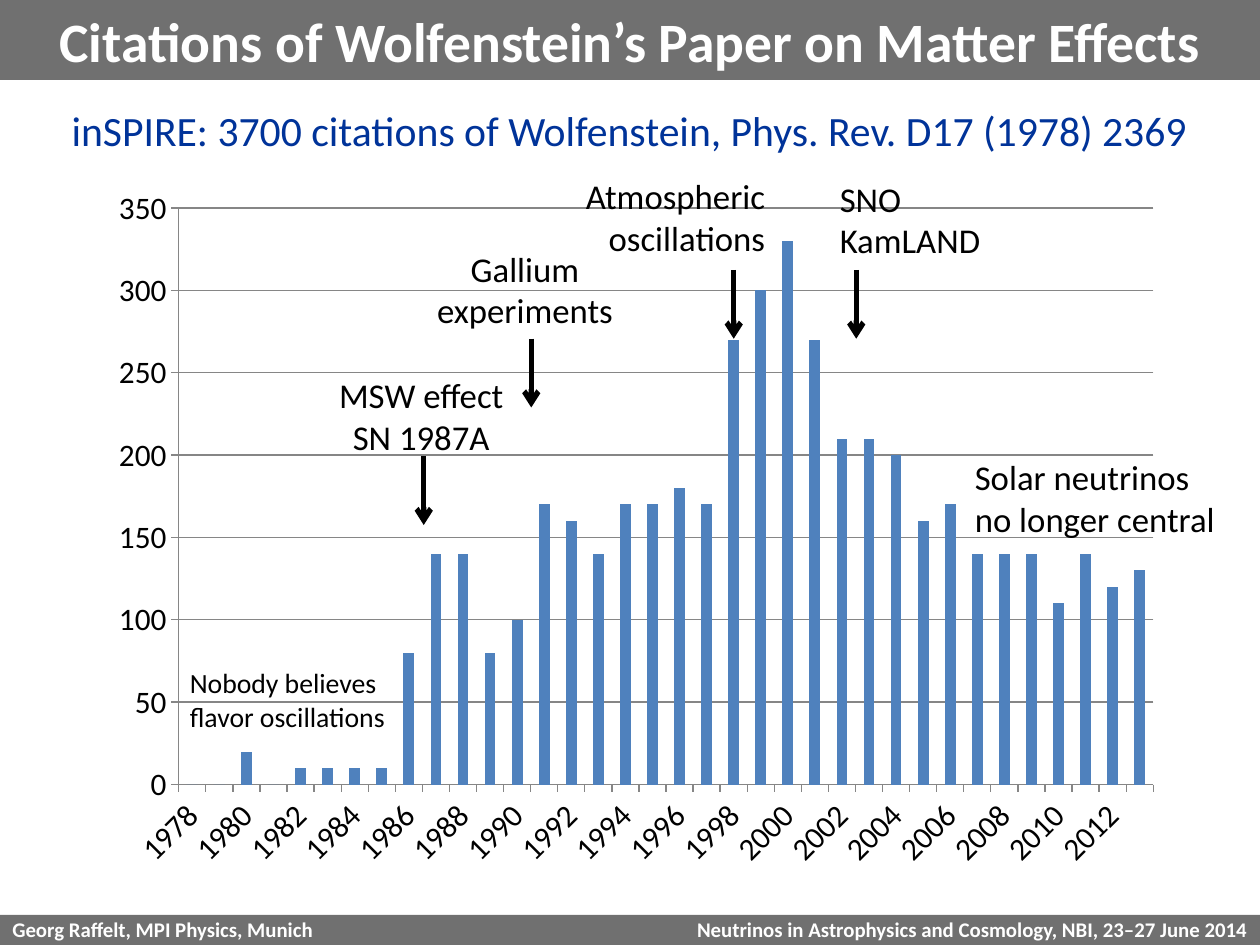
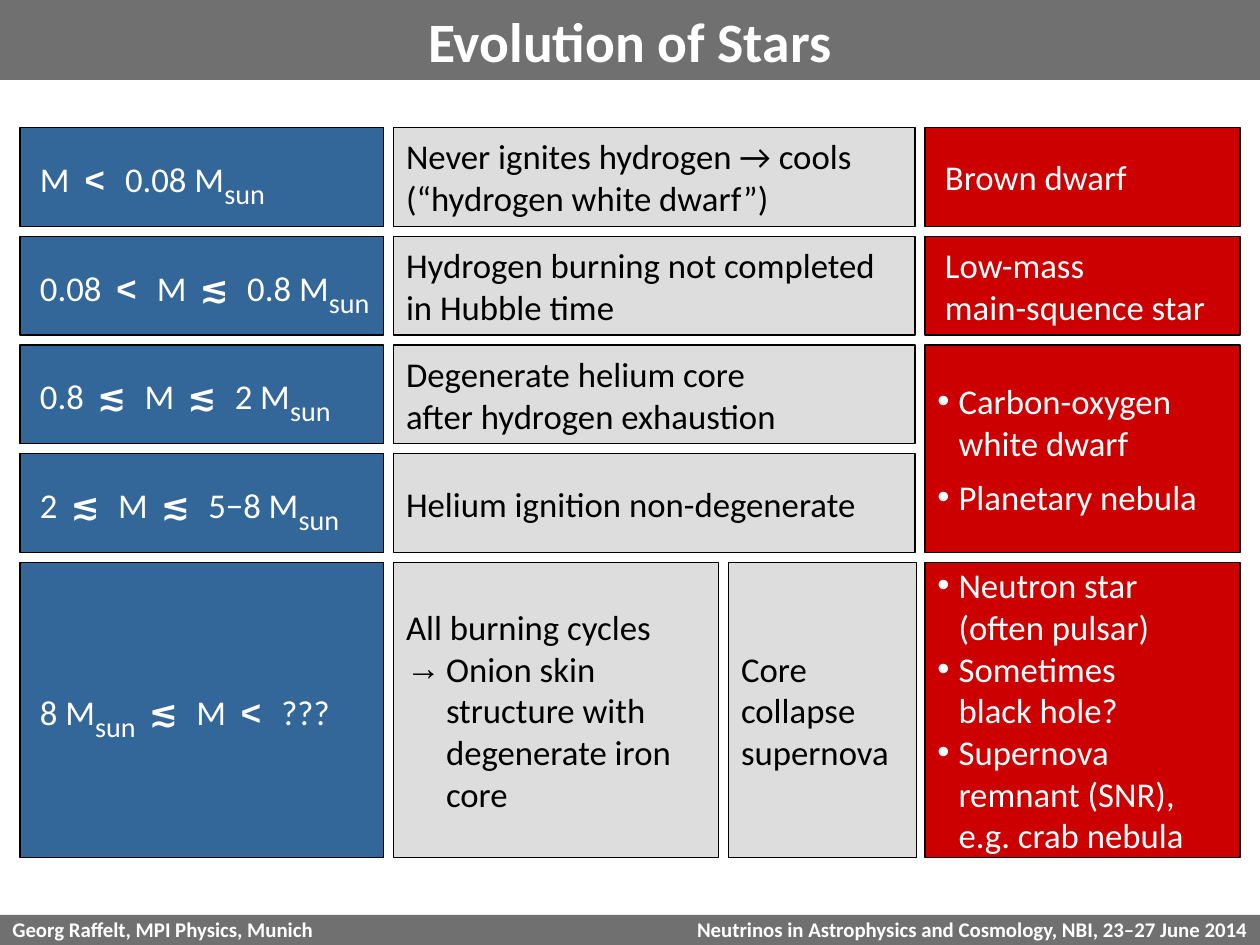
from pptx import Presentation
from pptx.chart.data import CategoryChartData
from pptx.dml.color import RGBColor
from pptx.enum.chart import XL_CHART_TYPE, XL_TICK_MARK
from pptx.enum.shapes import MSO_CONNECTOR, MSO_SHAPE
from pptx.enum.text import MSO_ANCHOR, MSO_AUTO_SIZE, PP_ALIGN
from pptx.oxml import parse_xml
from pptx.oxml.ns import nsdecls, qn
from pptx.util import Inches, Pt

LEFT, CENTER, RIGHT = PP_ALIGN.LEFT, PP_ALIGN.CENTER, PP_ALIGN.RIGHT
MIDDLE = MSO_ANCHOR.MIDDLE
RECTANGLE = MSO_SHAPE.RECTANGLE
STRAIGHT = MSO_CONNECTOR.STRAIGHT
STACKED = XL_CHART_TYPE.COLUMN_STACKED
OUTSIDE = XL_TICK_MARK.OUTSIDE

BLACK = RGBColor(0x00, 0x00, 0x00)
WHITE = RGBColor(0xFF, 0xFF, 0xFF)
BAND_GRAY = RGBColor(0x70, 0x70, 0x70)
AXIS_GRAY = RGBColor(0x86, 0x86, 0x86)
CELL_GRAY = RGBColor(0xDD, 0xDD, 0xDD)
NAVY = RGBColor(0x00, 0x33, 0x99)
BAR_BLUE = RGBColor(0x4F, 0x81, 0xBD)
MASS_BLUE = RGBColor(0x33, 0x66, 0x99)
RED = RGBColor(0xCC, 0x00, 0x00)

FONT = "Calibri"
WIDTH, HEIGHT = 10.08, 7.56
TITLE_HEIGHT, FOOTER_HEIGHT = 0.64, 0.24
BULLET_INDENTS = {"•": 0.17, "→": 0.32}
OPERATORS = (" < ", " ≲ ")


def write_lines(frame, lines, size, color, align=LEFT, bold=False, gap=0):
    """Fill a frame; a line is a string or a tuple of spans, and may open with a bullet."""
    for index, line in enumerate(lines):
        spans = [line] if isinstance(line, str) else list(line)
        para = frame.paragraphs[0] if index == 0 else frame.add_paragraph()
        para.alignment = align
        if index and gap:
            para.space_before = Pt(gap)
        bullet = spans[0][0]
        if bullet in BULLET_INDENTS:
            spans[0] = spans[0][2:]
            indent = Inches(BULLET_INDENTS[bullet])
            properties = para._p.get_or_add_pPr()
            properties.set("marL", str(indent))
            properties.set("indent", str(-indent))
            properties.append(parse_xml(f'<a:buFont {nsdecls("a")} typeface="Arial"/>'))
            properties.append(parse_xml(f'<a:buChar {nsdecls("a")} char="{bullet}"/>'))
        for text in spans:
            if text == "\v":
                para.add_line_break()
                continue
            span = para.add_run()
            span.text = text
            formats = {"name": FONT, "size": Pt(size), "bold": bold}
            if text in OPERATORS:
                formats["bold"] = True
                span._r.get_or_add_rPr().set("spc", "300")
            elif text == "sun":
                formats["size"] = Pt(28)
                span._r.get_or_add_rPr().set("baseline", "-25000")
            if text == " < ":
                formats["name"] = "Arial"
            for name, value in formats.items():
                setattr(span.font, name, value)
            span.font.color.rgb = color


def add_label(page, lines, at, size, color, align=LEFT, wrap=False):
    box = page.shapes.add_textbox(*map(Inches, at))
    box.text_frame.word_wrap = wrap
    write_lines(box.text_frame, lines, size, color, align)


deck = Presentation()
deck.slide_width, deck.slide_height = Inches(WIDTH), Inches(HEIGHT)

# Title bands
pages = []
for title_text in ("Citations of Wolfenstein’s Paper on Matter Effects", "Evolution of Stars"):
    page = deck.slides.add_slide(deck.slide_layouts[5])
    title = page.shapes.title
    title.left, title.top = Inches(0), Inches(0)
    title.width, title.height = Inches(WIDTH), Inches(TITLE_HEIGHT)
    title.fill.solid()
    title.fill.fore_color.rgb = BAND_GRAY
    title.text_frame.auto_size = MSO_AUTO_SIZE.NONE
    title.text_frame.vertical_anchor = MIDDLE
    write_lines(title.text_frame, [title_text], 32, WHITE, CENTER, bold=True)
    pages.append(page)
citations, stars = pages

# Footer band, moved to the master so that every slide shows it
footer_top = HEIGHT - FOOTER_HEIGHT
footer_parts = [
    (0, WIDTH, LEFT, BAND_GRAY, "Georg Raffelt, MPI Physics, Munich"),
    (WIDTH / 2, WIDTH / 2, RIGHT, None,
     "Neutrinos in Astrophysics and Cosmology, NBI, 23–27 June 2014"),
]
for left, width, align, fill, text in footer_parts:
    footer = citations.shapes.add_shape(
        RECTANGLE, Inches(left), Inches(footer_top), Inches(width), Inches(FOOTER_HEIGHT))
    footer.shadow.inherit = False
    footer.line.fill.background()
    if fill is None:
        footer.fill.background()
    else:
        footer.fill.solid()
        footer.fill.fore_color.rgb = fill
    frame = footer.text_frame
    frame.word_wrap = False
    frame.vertical_anchor = MIDDLE
    frame.margin_top, frame.margin_bottom = Inches(0.05), Inches(0.07)
    write_lines(frame, [text], 12, WHITE, align, bold=True)
    deck.slide_master.shapes.element.append(footer.element)

# Slide 1: citations per year
chart_data = CategoryChartData()
chart_data.categories = [str(year) for year in range(1978, 2014)]
chart_data.add_series("Series 1", [
    0, 0, 20, 0, 10, 10, 10, 10, 80, 140, 140, 80, 100, 170, 160, 140, 170, 170,
    180, 170, 270, 300, 330, 270, 210, 210, 200, 160, 170, 140, 140, 140, 110, 140, 120, 130])
chart = citations.shapes.add_chart(
    STACKED, Inches(0.67), Inches(1.5), Inches(8.74), Inches(5.66), chart_data).chart
chart.has_legend = False
chart.has_title = False
chart.font.name, chart.font.size = FONT, Pt(18)
chart.font.color.rgb = BLACK

bars = chart.plots[0]
bars.gap_width, bars.overlap = 150, 100
bars.vary_by_categories = False
bars.series[0].format.fill.solid()
bars.series[0].format.fill.fore_color.rgb = BAR_BLUE

value_axis = chart.value_axis
value_axis.minimum_scale, value_axis.maximum_scale, value_axis.major_unit = 0, 350, 50
value_axis.has_major_gridlines = True
value_axis.tick_labels.number_format = "0"
value_axis.tick_labels.number_format_is_linked = False
for axis in (chart.category_axis, value_axis):
    axis.major_tick_mark = OUTSIDE
for lines in (chart.category_axis, value_axis, value_axis.major_gridlines):
    lines.format.line.color.rgb = AXIS_GRAY
    lines.format.line.width = Pt(0.75)

plot_area = chart.element.find(".//" + qn("c:plotArea"))
for layout in plot_area.findall(qn("c:layout")):
    plot_area.remove(layout)
plot_area.insert(0, parse_xml(
    f'<c:layout {nsdecls("c")}><c:manualLayout><c:layoutTarget val="inner"/>'
    '<c:xMode val="edge"/><c:yMode val="edge"/><c:x val="0.087"/><c:y val="0.029"/>'
    '<c:w val="0.892"/><c:h val="0.815"/></c:manualLayout></c:layout>'))

add_label(citations, ["inSPIRE: 3700 citations of Wolfenstein, Phys. Rev. D17 (1978) 2369"],
          (0.31, 0.79, 9.45, 0.5), 24, NAVY, CENTER, wrap=True)
for lines, at, size, align in [
    (["MSW effect", "SN 1987A"], (2.6, 2.94, 1.54, 0.77), 20, CENTER),
    (["Gallium", "experiments"], (3.39, 1.93, 1.62, 0.77), 20, CENTER),
    (["Atmospheric", "oscillations"], (4.57, 1.35, 1.65, 0.77), 20, RIGHT),
    (["SNO", "KamLAND"], (6.62, 1.37, 1.34, 0.77), 20, LEFT),
    (["Nobody believes", "flavor oscillations"], (1.42, 5.28, 1.78, 0.64), 16, LEFT),
    (["Solar neutrinos", "no longer central"], (7.7, 3.6, 2.14, 0.77), 20, LEFT),
]:
    add_label(citations, lines, at, size, BLACK, align)

ARROW_LENGTH = 0.55
for x, y in [(3.39, 3.65), (4.25, 2.71), (5.87, 2.16), (6.85, 2.16)]:
    arrow = citations.shapes.add_connector(
        STRAIGHT, Inches(x), Inches(y), Inches(x), Inches(y + ARROW_LENGTH))
    arrow.line.color.rgb = BLACK
    arrow.line.width = Pt(3)
    arrow.line._get_or_add_ln().append(parse_xml(f'<a:tailEnd {nsdecls("a")} type="arrow"/>'))
    arrow.element.spPr.append(parse_xml(f'<a:effectLst {nsdecls("a")}/>'))

# Slide 2: grid of mass ranges, evolution and outcome
ROW_TOP, ROW_PITCH, ROW_HEIGHT, LAST_HEIGHT = 1.02, 0.87, 0.79, 2.36
LAST_ROW = 4
# Left, width, left inset, fill, text colour
COLUMNS = {
    "mass": (0.16, 2.91, 0.16, MASS_BLUE, WHITE),
    "evolution": (3.15, 4.17, 0.1, CELL_GRAY, BLACK),
    "burning": (3.15, 2.6, 0.1, CELL_GRAY, BLACK),
    "collapse": (5.83, 1.5, 0.1, CELL_GRAY, BLACK),
    "outcome": (7.4, 2.52, 0.16, RED, WHITE),
    "outcome list": (7.4, 2.52, 0.1, RED, WHITE),
}
# Column, first row, rows covered, lines
CELLS = [
    ("mass", 0, 1, [("M", " < ", "0.08 M", "sun")]),
    ("evolution", 0, 1, ["Never ignites hydrogen → cools", "(“hydrogen white dwarf”)"]),
    ("outcome", 0, 1, ["Brown dwarf"]),
    ("mass", 1, 1, [("0.08", " < ", "M", " ≲ ", "0.8 M", "sun")]),
    ("evolution", 1, 1, ["Hydrogen burning not completed", "in Hubble time"]),
    ("outcome", 1, 1, ["Low-mass", "main-squence star"]),
    ("mass", 2, 1, [("0.8", " ≲ ", "M", " ≲ ", "2 M", "sun")]),
    ("evolution", 2, 1, ["Degenerate helium core", "after hydrogen exhaustion"]),
    ("outcome list", 2, 2, [("• Carbon-oxygen", "\v", "white dwarf"), "• Planetary nebula"]),
    ("mass", 3, 1, [("2", " ≲ ", "M", " ≲ ", "5−8 M", "sun")]),
    ("evolution", 3, 1, ["Helium ignition non-degenerate"]),
    ("mass", 4, 1, [("8 M", "sun", " ≲ ", "M", " < ", "???")]),
    ("burning", 4, 1, ["All burning cycles", (
        "→ Onion skin", "\v", "structure with", "\v", "degenerate iron", "\v", "core")]),
    ("collapse", 4, 1, ["Core", "collapse", "supernova"]),
    ("outcome list", 4, 1, [
        ("• Neutron star", "\v", "(often pulsar)"),
        ("• Sometimes", "\v", "black hole?"),
        ("• Supernova", "\v", "remnant (SNR),", "\v", "e.g. crab nebula")]),
]
for column, row, rows, lines in CELLS:
    left, width, inset, fill, color = COLUMNS[column]
    height = LAST_HEIGHT if row == LAST_ROW else ROW_HEIGHT + (rows - 1) * ROW_PITCH
    cell = stars.shapes.add_shape(
        RECTANGLE, Inches(left), Inches(ROW_TOP + row * ROW_PITCH), Inches(width), Inches(height))
    cell.shadow.inherit = False
    cell.fill.solid()
    cell.fill.fore_color.rgb = fill
    cell.line.color.rgb = BLACK
    cell.line.width = Pt(0.75)
    frame = cell.text_frame
    frame.word_wrap = True
    frame.vertical_anchor = MIDDLE
    frame.margin_left, frame.margin_right = Inches(inset), Inches(0)
    write_lines(frame, lines, 20, color, gap=7 if rows > 1 else 0)

deck.save("out.pptx")
